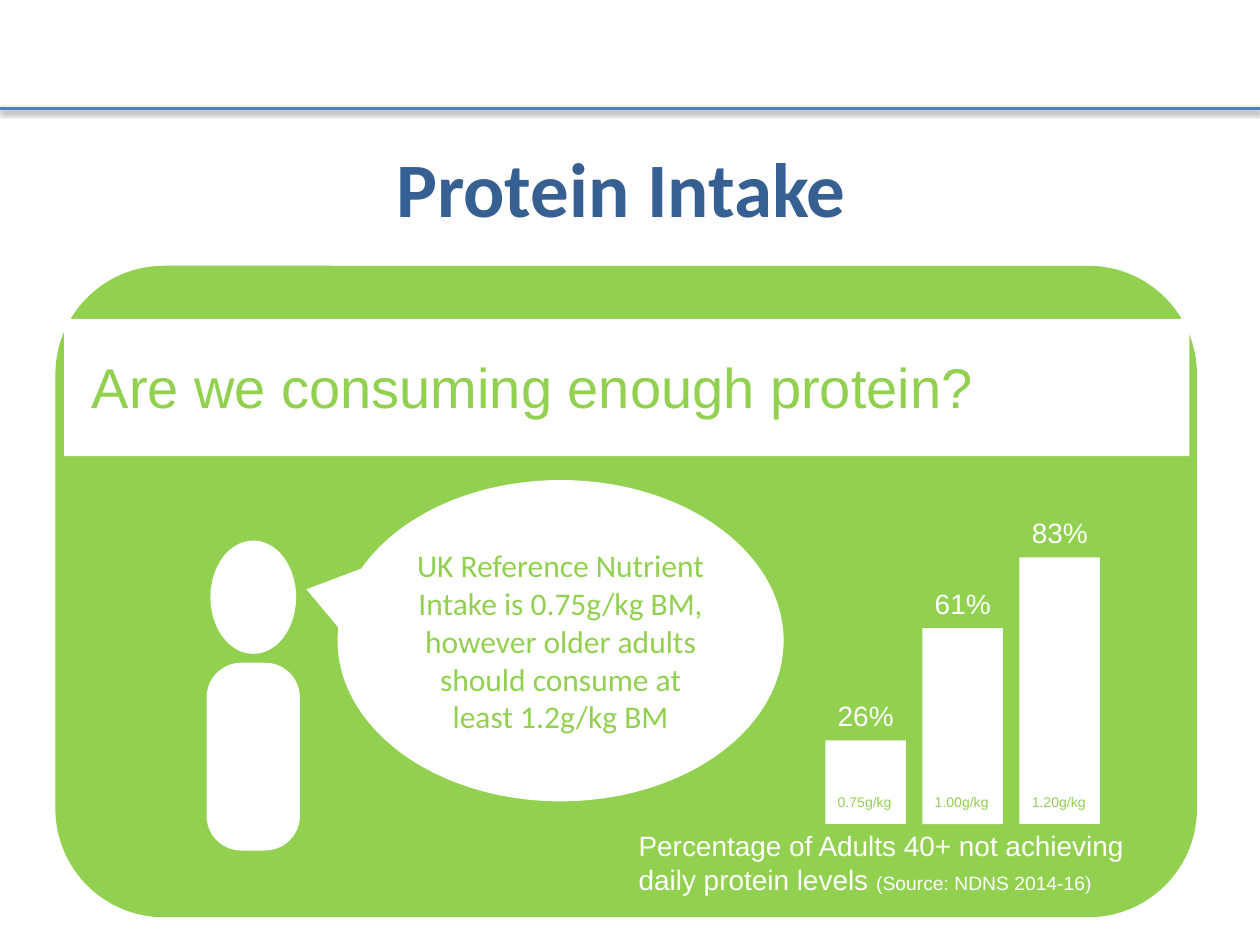
from lxml.etree import fromstring
from pptx import Presentation
from pptx.dml.color import RGBColor
from pptx.enum.shapes import MSO_CONNECTOR, MSO_SHAPE
from pptx.enum.text import MSO_ANCHOR, PP_ALIGN
from pptx.oxml.ns import nsdecls
from pptx.util import Inches, Pt

COLORS = {"green": "92D050", "white": "FFFFFF", "title": "376092", "rule": "4F81BD"}

prs = Presentation()
prs.slide_width, prs.slide_height = Inches(10), Inches(7.5)
s = prs.slides.add_slide(prs.slide_layouts[6])

# Grid of 100 columns by 75 rows
COL, ROW = prs.slide_width / 100, prs.slide_height / 75


def add_block(kind, x, y, w, h, color="white"):
    sp = s.shapes.add_shape(kind, int(x * COL), int(y * ROW), int(w * COL), int(h * ROW))
    sp.shadow.inherit = False
    sp.fill.solid()
    sp.fill.fore_color.rgb = RGBColor.from_string(COLORS[color])
    sp.line.fill.background()
    return sp


def add_text(text, x, y, w, h, size, color="white", font="Arial", box=None):
    """Write text into a new text box, or centred into a given shape."""
    sp = box or s.shapes.add_textbox(int(x * COL), int(y * ROW), int(w * COL), int(h * ROW))
    tf = sp.text_frame
    tf.word_wrap = True
    tf.text = text
    p = tf.paragraphs[0]
    if font == "Calibri":
        tf.vertical_anchor = MSO_ANCHOR.MIDDLE
        p.alignment = PP_ALIGN.CENTER
    r = p.runs[0]
    r.font.name, r.font.size = font, Pt(size)
    r.font.color.rgb = RGBColor.from_string(COLORS[color])
    return p


# Header rule with a soft shadow
rule = s.shapes.add_connector(MSO_CONNECTOR.STRAIGHT, prs.slide_width, int(8.6 * ROW),
                              0, int(8.6 * ROW))
rule.line.color.rgb = RGBColor.from_string(COLORS["rule"])
rule.line.width = Pt(2)
rule._element.spPr.append(fromstring(
    f'<a:effectLst {nsdecls("a")}><a:outerShdw blurRad="40000" dist="20000" dir="5400000" '
    'rotWithShape="0"><a:srgbClr val="000000"><a:alpha val="38000"/></a:srgbClr>'
    '</a:outerShdw></a:effectLst>'))

# Title
p = add_text("Protein Intake ", 5, 8.6, 90, 12.5, 44, "title", "Calibri")
p.runs[0].font.bold = True

# Green panel and question band
add_block(MSO_SHAPE.ROUNDED_RECTANGLE, 4.4, 21.1, 90.6, 51.7, "green")
add_block(MSO_SHAPE.RECTANGLE, 5.1, 25.3, 89.3, 10.9)
add_text("Are we consuming enough protein?", 6.3, 27.5, 75, 6.9, 32, "green")

# Person and speech bubble
add_block(MSO_SHAPE.OVAL, 16.7, 42.9, 6.8, 9)
body = add_block(MSO_SHAPE.ROUNDED_RECTANGLE, 16.4, 52.6, 7.4, 14.9)
body.adjustments[0] = 0.37
bubble = add_block(MSO_SHAPE.OVAL_CALLOUT, 26.8, 38.1, 35.4, 25.5)
bubble.adjustments[0], bubble.adjustments[1] = -0.57, -0.16
add_text("UK Reference Nutrient Intake is 0.75g/kg BM, however older adults should "
         "consume at least 1.2g/kg BM", 0, 0, 0, 0, 18, "green", "Calibri", bubble)

# Bars: height follows the percentage, all standing on one base line
BASE, FIRST, STEP, ROWS_PER_PERCENT = 65.4, 65.5, 7.7, 0.255
for i, (percent, level) in enumerate([(26, "0.75g/kg"), (61, "1.00g/kg"), (83, "1.20g/kg")]):
    x, h = FIRST + i * STEP, percent * ROWS_PER_PERCENT
    add_block(MSO_SHAPE.RECTANGLE, x, BASE - h, 6.4, h)
    add_text(f"{percent}%", x, BASE - h - 3.8, 6.8, 4, 16)
    add_text(level, x, 62.5, 6.8, 2.5, 8, "green")

# Caption with a smaller source
p = add_text("Percentage of Adults 40+ not achieving daily protein levels ",
             49.7, 65.3, 43.2, 6.6, 16)
r = p.add_run()
r.text = "(Source: NDNS 2014-16)"
r.font.name, r.font.size = "Arial", Pt(11)
r.font.color.rgb = RGBColor.from_string(COLORS["white"])

prs.save("out.pptx")
